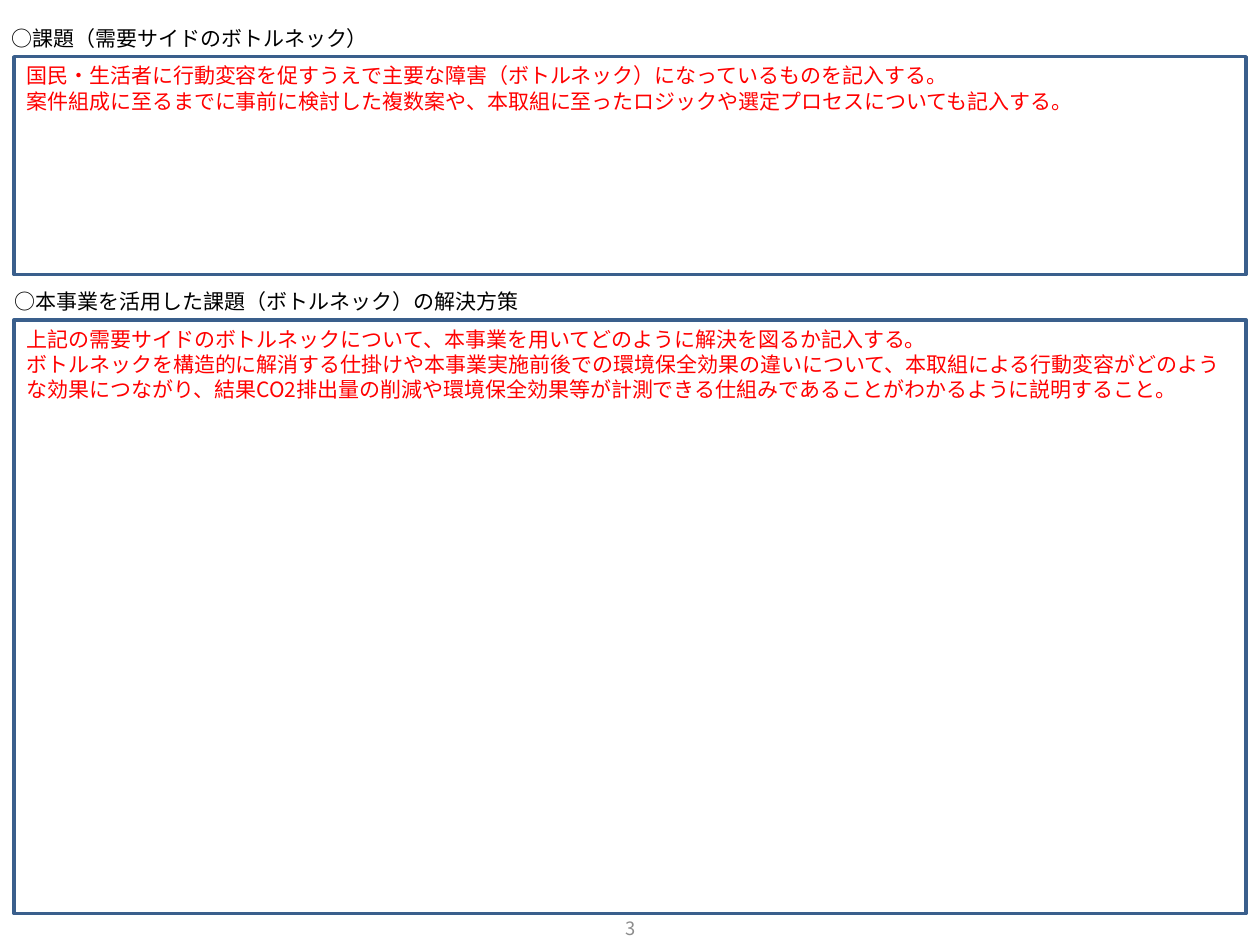
from lxml import etree
from pptx import Presentation
from pptx.dml.color import RGBColor
from pptx.enum.shapes import MSO_SHAPE as Shape
from pptx.enum.text import MSO_ANCHOR as Anchor, MSO_AUTO_SIZE as AutoSize, PP_ALIGN as Align
from pptx.oxml.ns import qn
from pptx.util import Inches, Pt

FONT = "Noto Sans CJK JP"
COLORS = {"heading": "000000", "guide": "FF0000", "frame": "3A5F8C", "number": "8C8C8C"}
FRAME_LEFT, FRAME_WIDTH = 0.11, 9.78

ISSUE_GUIDE = [
    "国民・生活者に行動変容を促すうえで主要な障害（ボトルネック）になっているものを記入する。",
    "案件組成に至るまでに事前に検討した複数案や、本取組に至ったロジックや選定プロセスについても記入する。",
]
SOLUTION_GUIDE = [
    "上記の需要サイドのボトルネックについて、本事業を用いてどのように解決を図るか記入する。",
    "ボトルネックを構造的に解消する仕掛けや本事業実施前後での環境保全効果の違いについて、"
    "本取組による行動変容がどのような効果につながり、結果CO2排出量の削減や環境保全効果等が"
    "計測できる仕組みであることがわかるように説明すること。",
]


def color(name):
    return RGBColor.from_string(COLORS[name])


def write(box, lines, color_name, size=12, align=Align.LEFT, anchor=Anchor.TOP):
    frame = box.text_frame
    frame.word_wrap = True
    frame.auto_size = AutoSize.NONE
    frame.vertical_anchor = anchor
    for index, line in enumerate(lines):
        para = frame.paragraphs[0] if index == 0 else frame.add_paragraph()
        para.alignment = align
        para.line_spacing = Pt(size * 1.2)
        para.space_before = Pt(0)
        span = para.add_run()
        span.text = line
        span.font.size = Pt(size)
        span.font.name = FONT
        span.font.color.rgb = color(color_name)
        etree.SubElement(span.font._element, qn("a:ea"), typeface=FONT)


def place(box, left, top, width, height):
    box.left, box.top = Inches(left), Inches(top)
    box.width, box.height = Inches(width), Inches(height)


def add_heading(box, text, left, top, width, height=0.3):
    place(box, left, top, width, height)
    write(box, [text], "heading")


def add_guide_frame(page, lines, top, height):
    box = page.shapes.add_shape(
        Shape.RECTANGLE, Inches(FRAME_LEFT), Inches(top), Inches(FRAME_WIDTH), Inches(height)
    )
    box.shadow.inherit = False
    box.fill.background()
    box.line.color.rgb = color("frame")
    box.line.width = Pt(2)
    write(box, lines, "guide")


def add_page_number(page, number, left, top, width, height):
    box = page.shapes.add_textbox(Inches(left), Inches(top), Inches(width), Inches(height))
    write(box, [number], "number", 10.5, Align.CENTER, Anchor.MIDDLE)


def main():
    deck = Presentation()
    deck.slide_width, deck.slide_height = Inches(10), Inches(7.5)
    page = deck.slides.add_slide(deck.slide_layouts[5])

    add_heading(page.shapes.title, "○課題（需要サイドのボトルネック）", -0.01, 0.15, 9.49)
    add_guide_frame(page, ISSUE_GUIDE, 0.45, 1.73)

    solution_heading = page.shapes.add_textbox(0, 0, 0, 0)
    add_heading(solution_heading, "○本事業を活用した課題（ボトルネック）の解決方策", 0.02, 2.24, 5.43)
    add_guide_frame(page, SOLUTION_GUIDE, 2.54, 4.71)

    add_page_number(page, "3", 4.67, 7.25, 0.67, 0.24)
    deck.save("out.pptx")


if __name__ == "__main__":
    main()
